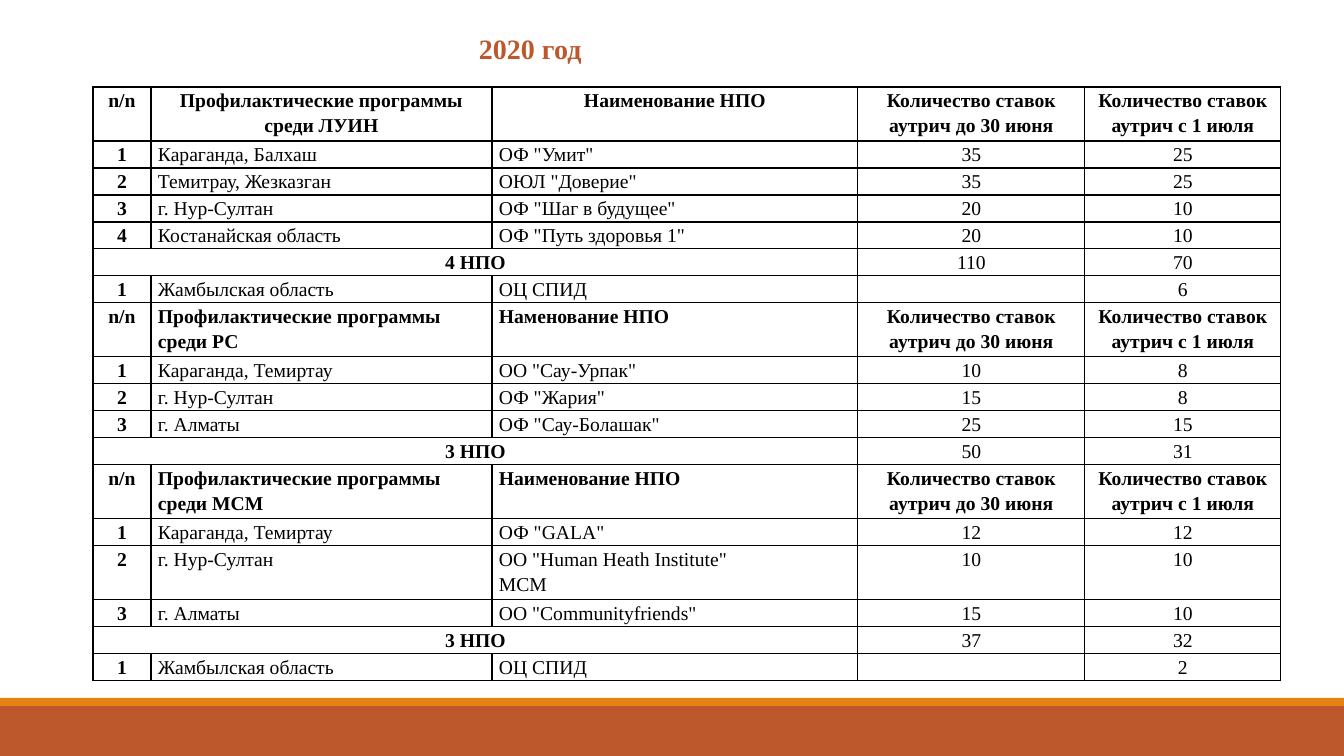
from lxml.etree import SubElement
from pptx import Presentation
from pptx.dml.color import RGBColor
from pptx.enum.shapes import MSO_SHAPE
from pptx.enum.text import MSO_ANCHOR, PP_ALIGN
from pptx.oxml.ns import qn
from pptx.util import Pt

SCALE = 914400 / 100.8
HUES = {"rust": "BD582C", "amber": "E48312", "ink": "000000"}
FACE = "Times New Roman"
LEFT, MID = PP_ALIGN.LEFT, PP_ALIGN.CENTER
COLS = [58, 341, 366, 227, 196]
LINE = 27
HEADS = ["Количество ставок аутрич до 30 июня", "Количество ставок аутрич с 1 июля"]

GROUPS = [
    ("ЛУИН", "Наименование НПО", MID, [
        ("1", "Караганда, Балхаш", 'ОФ "Умит"', "35", "25"),
        ("2", "Темитрау, Жезказган", 'ОЮЛ "Доверие"', "35", "25"),
        ("3", "г. Нур-Султан", 'ОФ "Шаг в будущее"', "20", "10"),
        ("4", "Костанайская область", 'ОФ "Путь здоровья 1"', "20", "10"),
        ("4 НПО", "", "", "110", "70"),
        ("1", "Жамбылская область", "ОЦ СПИД", "", "6"),
    ]),
    ("РС", "Наменование НПО", LEFT, [
        ("1", "Караганда, Темиртау", 'ОО "Сау-Урпак"', "10", "8"),
        ("2", "г. Нур-Султан", 'ОФ "Жария"', "15", "8"),
        ("3", "г. Алматы", 'ОФ "Сау-Болашак"', "25", "15"),
        ("3 НПО", "", "", "50", "31"),
    ]),
    ("МСМ", "Наименование НПО", LEFT, [
        ("1", "Караганда, Темиртау", 'ОФ "GALA"', "12", "12"),
        ("2", "г. Нур-Султан", 'ОО "Human Heath Institute"\vМСМ', "10", "10"),
        ("3", "г. Алматы", 'ОО "Communityfriends"', "15", "10"),
        ("3 НПО", "", "", "37", "32"),
        ("1", "Жамбылская область", "ОЦ СПИД", "", "2"),
    ]),
]


def px(num):
    return round(num * SCALE)


def hue(name):
    return RGBColor.from_string(HUES[name])


def write(frame, text, size=14, bold=False, tint="ink", align=LEFT, space=1.15):
    para = frame.paragraphs[0]
    para.text = text
    para.alignment = align
    para.line_spacing = space
    for run in para.runs:
        font = run.font
        font.name, font.size, font.bold = FACE, Pt(size), bold
        font.color.rgb = hue(tint)
    if not text:
        SubElement(para._p, qn("a:endParaRPr"), sz=str(size * 100))


class Board:
    def __init__(self, deck, face):
        self.face = face
        self.slide = deck.slides.add_slide(deck.slide_layouts[6])

    def band(self, top, high, tint):
        bar = self.slide.shapes.add_shape(MSO_SHAPE.RECTANGLE, 0, px(top), px(1344), px(high))
        bar.shadow.inherit = False
        bar.fill.solid()
        bar.fill.fore_color.rgb = hue(tint)
        bar.line.fill.background()

    def title(self, left, top, wide, high, text):
        box = self.slide.shapes.add_textbox(px(left), px(top), px(wide), px(high))
        frame = box.text_frame
        frame.word_wrap = True
        frame.vertical_anchor = MSO_ANCHOR.TOP
        frame.margin_top = px(7)
        write(frame, text, size=20, bold=True, tint="rust", space=1.0)

    def border(self, cell):
        props = cell._tc.get_or_add_tcPr()
        for side in "LRTB":
            edge = SubElement(props, qn("a:ln" + side), w=str(Pt(1)))
            fill = SubElement(edge, qn("a:solidFill"))
            SubElement(fill, qn("a:srgbClr"), val=HUES["ink"])

    def cell(self, cell, text, bold, align):
        cell.margin_left = cell.margin_right = px(7)
        cell.margin_top = cell.margin_bottom = 0
        self.border(cell)
        cell.fill.background()
        write(cell.text_frame, text, bold=bold, align=align)

    def table(self, left, top, groups):
        rows = []
        for name, label, align, items in groups:
            head = ["n/n", "Профилактические программы среди " + name, label, *HEADS]
            rows.append((head, True, align))
            rows += [(item, False, LEFT) for item in items]
        highs = [LINE * (2 if head or "\v" in row[2] else 1) for row, head, _ in rows]
        grid = self.slide.shapes.add_table(
            len(rows), len(COLS), px(left), px(top), px(sum(COLS)), px(sum(highs))).table
        grid.first_row = grid.horz_banding = False
        for col, wide in zip(grid.columns, COLS):
            col.width = px(wide)
        for y, (row, head, align) in enumerate(rows):
            grid.rows[y].height = px(highs[y])
            for x, text in enumerate(row):
                self.cell(grid.cell(y, x), text, head or x == 0, align if x in (1, 2) else MID)
            if not row[1]:
                grid.cell(y, 0).merge(grid.cell(y, 2))


def main():
    deck = Presentation()
    deck.slide_width, deck.slide_height = px(1344), px(756)
    board = Board(deck, FACE)
    board.band(706, 50, "rust")
    board.band(698, 8, "amber")
    board.table(93, 87, GROUPS)
    board.title(469, 25, 241, 75, "2020 год")
    deck.save("out.pptx")


if __name__ == "__main__":
    main()
